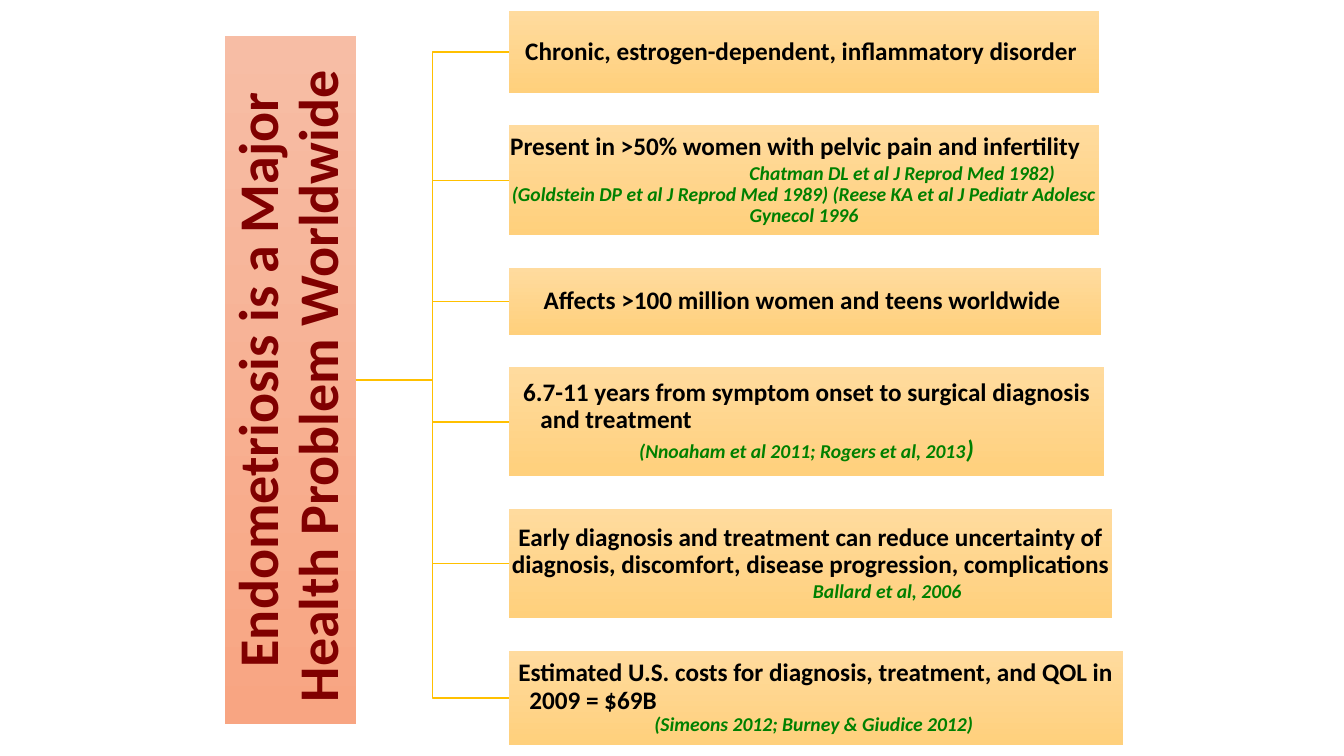
"""Build a slide on endometriosis as a horizontal hierarchy of facts."""
from pptx import Presentation
from pptx.dml.color import RGBColor
from pptx.enum.shapes import MSO_SHAPE
from pptx.enum.text import MSO_ANCHOR, MSO_AUTO_SIZE, PP_ALIGN
from pptx.util import Inches, Pt

RECTANGLE = MSO_SHAPE.RECTANGLE
MIDDLE = MSO_ANCHOR.MIDDLE
NO_AUTOFIT = MSO_AUTO_SIZE.NONE
CENTER, LEFT = PP_ALIGN.CENTER, PP_ALIGN.LEFT

FONT = "Calibri"
BLACK = RGBColor(0x00, 0x00, 0x00)
MAROON = RGBColor(0x80, 0x00, 0x00)
GREEN = RGBColor(0x00, 0x80, 0x00)
GOLD = RGBColor(0xFF, 0xC0, 0x00)
SALMON = (RGBColor(0xF7, 0xBD, 0xA5), RGBColor(0xF8, 0xA5, 0x82))
AMBER = (RGBColor(0xFF, 0xDB, 0x9E), RGBColor(0xFF, 0xD0, 0x7C))

TITLE_RIGHT, TITLE_MIDDLE = 3.53, 3.77
TITLE_LENGTH, TITLE_DEPTH = 6.82, 1.3
TRUNK_X, FACT_LEFT = 4.29, 5.05
FIRST_TOP, FACT_GAP = 0.11, 0.325


def statement(*texts, **layout):
    """Describe a black paragraph."""
    return {"spans": [(text, 18) for text in texts], "color": BLACK, **layout}


def citation(*spans, **layout):
    """Describe a green italic paragraph of (text, size) spans."""
    return {"spans": spans, "color": GREEN, "italic": True, **layout}


FACTS = [
    (5.85, 0.81, [statement("Chronic, estrogen-dependent, inflammatory disorder ")]),
    (5.85, 1.09, [
        statement("Present in >50% women with pelvic pain and infertility", align=LEFT),
        citation(("Chatman DL et al J Reprod Med 1982)", 14), margin=1.95, before=2),
        citation(("(Goldstein DP et al J Reprod Med 1989) "
                  "(Reese KA et al J Pediatr Adolesc Gynecol 1996", 14)),
    ]),
    (5.87, 0.66, [statement("Affects >100 million women and teens worldwide ")]),
    (5.9, 1.08, [
        statement("6.7-11 years from symptom onset to surgical diagnosis and treatment",
                  align=LEFT, margin=0.3, indent=-0.17),
        citation(("(Nnoaham et al 2011; Rogers et al, 2013", 14), (")", 18), before=2),
    ]),
    (5.98, 1.08, [
        statement("Early diagnosis and treatment can reduce uncertainty of diagnosis, "
                  "discomfort, disease progression, complications"),
        citation(("Ballard et al, 2006", 14), margin=1.52, before=2),
    ]),
    (6.09, 0.94, [
        statement("Estimated U.S. costs for diagnosis, treatment, and QOL in 2009 = $69B",
                  align=LEFT, margin=0.19, indent=-0.11),
        citation(("(Simeons 2012; Burney & Giudice 2012) ", 14)),
    ]),
]


def fill_gradient(shape, colors):
    """Fill a shape from top to bottom, whatever its rotation."""
    shape.fill.gradient()
    shape.fill.gradient_angle = 270
    for stop, color, position in zip(shape.fill.gradient_stops, colors, (0, 1)):
        stop.color.rgb = color
        stop.position = position
    gradient = shape._element.spPr.find(
        "{http://schemas.openxmlformats.org/drawingml/2006/main}gradFill")
    gradient.set("rotWithShape", "0")


def set_frame(frame, inset):
    """Centre the text vertically with equal insets."""
    frame.word_wrap = True
    frame.auto_size = NO_AUTOFIT
    frame.vertical_anchor = MIDDLE
    frame.margin_left = frame.margin_right = Inches(inset)
    frame.margin_top = frame.margin_bottom = Inches(inset)


def write_para(para, spans, color, italic=False, align=CENTER, margin=0, indent=0, before=0):
    """Write bold (text, size) spans into a paragraph."""
    properties = para._p.get_or_add_pPr()
    properties.set("marL", str(Inches(margin)))
    properties.set("indent", str(Inches(indent)))
    para.alignment = align
    para.line_spacing = 0.9
    para.space_before = Pt(before)
    for text, size in spans:
        span = para.add_run()
        span.text = text
        span.font.name = FONT
        span.font.size = Pt(size)
        span.font.bold = True
        span.font.italic = italic
        span.font.color.rgb = color


def add_title(page):
    """Turn the title placeholder into the upright heading bar."""
    title = page.shapes.title
    title.left = Inches(TITLE_RIGHT - (TITLE_DEPTH + TITLE_LENGTH) / 2)
    title.top = Inches(TITLE_MIDDLE - TITLE_DEPTH / 2)
    title.width, title.height = Inches(TITLE_LENGTH), Inches(TITLE_DEPTH)
    title.rotation = 270
    fill_gradient(title, SALMON)
    set_frame(title.text_frame, 0.03)
    write_para(title.text_frame.paragraphs[0],
               [("Endometriosis is a Major Health Problem Worldwide ", 40)], MAROON)


def add_branch(page, middle):
    """Draw the elbow line from the heading to a fact."""
    builder = page.shapes.build_freeform(Inches(TITLE_RIGHT), Inches(TITLE_MIDDLE))
    corners = [(TRUNK_X, TITLE_MIDDLE), (TRUNK_X, middle), (FACT_LEFT, middle)]
    builder.add_line_segments([(Inches(x), Inches(y)) for x, y in corners], close=False)
    branch = builder.convert_to_shape()
    branch.shadow.inherit = False
    branch.fill.background()
    branch.line.color.rgb = GOLD
    branch.line.width = Pt(1)


def add_fact(page, top, width, height, paras):
    """Add one fact box with its paragraphs."""
    box = page.shapes.add_shape(
        RECTANGLE, Inches(FACT_LEFT), Inches(top), Inches(width), Inches(height))
    box.shadow.inherit = False
    box.line.fill.background()
    fill_gradient(box, AMBER)
    frame = box.text_frame
    set_frame(frame, 0.01)
    for index, content in enumerate(paras):
        para = frame.add_paragraph() if index else frame.paragraphs[0]
        write_para(para, **content)


def main():
    """Build and save the deck."""
    deck = Presentation()
    deck.slide_width, deck.slide_height = Inches(13.33), Inches(7.5)
    page = deck.slides.add_slide(deck.slide_layouts.get_by_name("Title Only"))
    add_title(page)
    top = FIRST_TOP
    for width, height, paras in FACTS:
        add_branch(page, top + height / 2)
        add_fact(page, top, width, height, paras)
        top += height + FACT_GAP
    deck.save("out.pptx")


if __name__ == "__main__":
    main()
